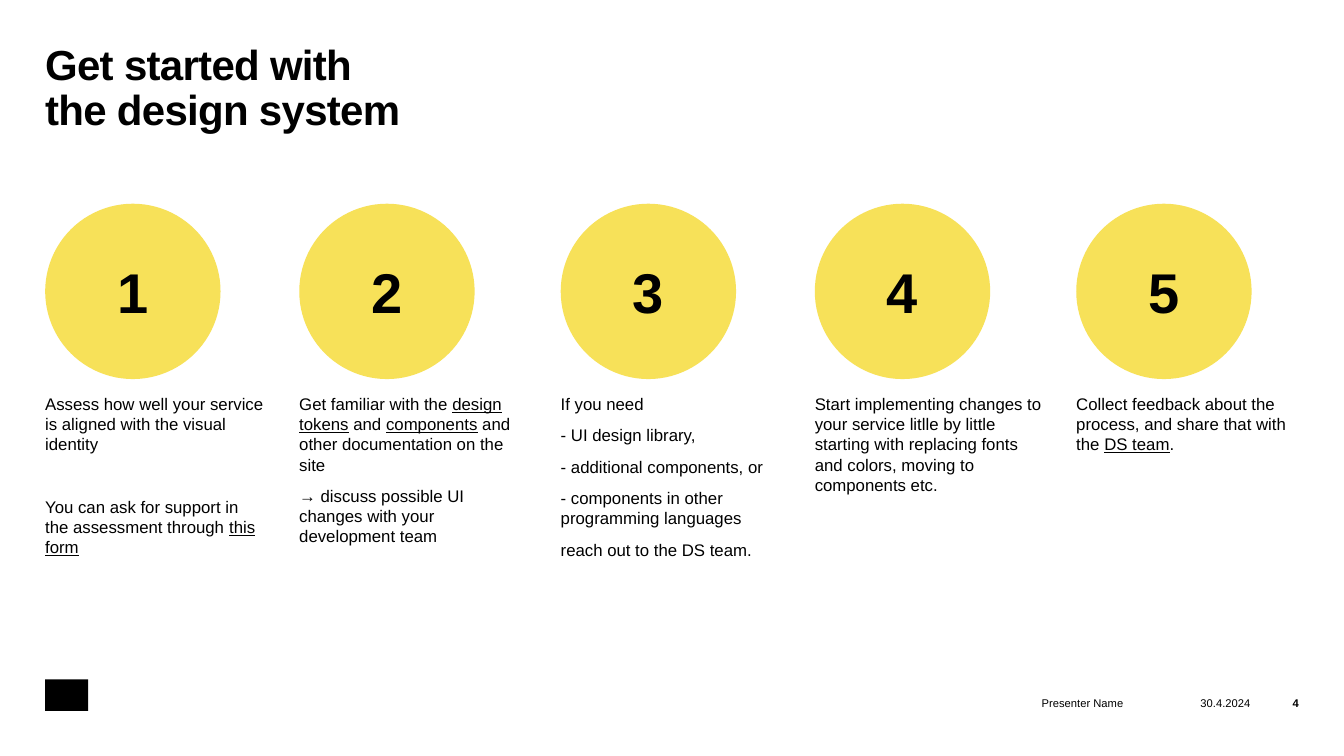
import pptx
import pptx.util
import pptx.dml.color
import pptx.enum.shapes
import pptx.enum.text

PX = 9525
FONT = "Arial"
BLACK = pptx.dml.color.RGBColor(0x00, 0x00, 0x00)
YELLOW = pptx.dml.color.RGBColor(0xF7, 0xE1, 0x59)
SHAPE = pptx.enum.shapes.MSO_SHAPE
ALIGN = pptx.enum.text.PP_ALIGN
ANCHOR = pptx.enum.text.MSO_ANCHOR

STEPS = [
    [
        "Assess how well your service is aligned with the visual identity",
        "You can ask for support in the assessment through _this form_",
    ],
    [
        "Get familiar with the _design tokens_ and _components_ and other documentation on the site",
        "→ discuss possible UI changes with your development team",
    ],
    [
        "If you need",
        "- UI design library,",
        "- additional components, or",
        "- components in other programming languages",
        "reach out to the DS team.",
    ],
    [
        "Start implementing changes to your service litlle by little starting with "
        "replacing fonts and colors, moving to components etc.",
    ],
    ["Collect feedback about the process, and share that with the _DS team_."],
]


def emu(*lengths):
    return [pptx.util.Emu(v * PX) for v in lengths]


def write(sp, paragraphs, size=12, bold=False, align=ALIGN.LEFT, anchor=ANCHOR.TOP,
          gap=8, line=None, spacing=None):
    tf = sp.text_frame
    tf.word_wrap = True
    tf.vertical_anchor = anchor
    tf.margin_left = tf.margin_top = tf.margin_right = tf.margin_bottom = 0
    for i, text in enumerate(paragraphs):
        p = tf.add_paragraph() if i else tf.paragraphs[0]
        p.alignment = align
        p.space_before = pptx.util.Pt(gap if i else 0)
        if line:
            p.line_spacing = line
        for j, part in enumerate(text.split("_")):
            for k, piece in enumerate(part.split("\n")):
                if k:
                    p.add_line_break()
                r = p.add_run()
                r.text = piece
                r.font.name = FONT
                r.font.size = pptx.util.Pt(size)
                r.font.bold = bold
                r.font.color.rgb = BLACK
                if j % 2:
                    r.font.underline = True
                if spacing:
                    r.font._element.set("spc", str(spacing))


def add_text(s, box, paragraphs, **fmt):
    write(s.shapes.add_textbox(*emu(*box)), paragraphs, **fmt)


def add_filled(s, kind, box, color):
    sp = s.shapes.add_shape(kind, *emu(*box))
    sp.shadow.inherit = False
    sp.fill.solid()
    sp.fill.fore_color.rgb = color
    sp.line.fill.background()
    return sp


def add_title(s, box):
    add_text(s, box, ["Get started with\nthe design system"],
             size=30, bold=True, line=0.9, spacing=-50)


def add_steps(s, x, y, h):
    pair, offset, circle, text_top = 491, 242, 167, 181
    for i, paragraphs in enumerate(STEPS):
        left = x + i // 2 * pair + i % 2 * offset
        width = 219 if i % 2 else 211
        sp = add_filled(s, SHAPE.OVAL, (left, y, circle, circle), YELLOW)
        write(sp, [str(i + 1)], size=40, bold=True, align=ALIGN.CENTER, anchor=ANCHOR.MIDDLE)
        add_text(s, (left, y + text_top, width, h - text_top), paragraphs,
                 gap=8 if i else 30)


def add_footer(s, x, y, w, h):
    add_filled(s, SHAPE.RECTANGLE, (x, y, 41, h), BLACK)
    right = x + w
    for text, offset, width, bold in (
        ("Presenter Name", 1104, 937, False),
        ("30.4.2024", 167, 121, False),
        ("4", 46, 46, True),
    ):
        add_text(s, (right - offset, y + 15, width, 15), [text], size=8, bold=bold,
                 align=ALIGN.RIGHT, anchor=ANCHOR.MIDDLE)


def main():
    prs = pptx.Presentation()
    prs.slide_width, prs.slide_height = emu(1280, 720)
    s = prs.slides.add_slide(prs.slide_layouts[6])
    add_title(s, (43, 42, 1194, 113))
    add_steps(s, 43, 194, 423)
    add_footer(s, 43, 647, 1194, 30)
    prs.save("out.pptx")


if __name__ == "__main__":
    main()
